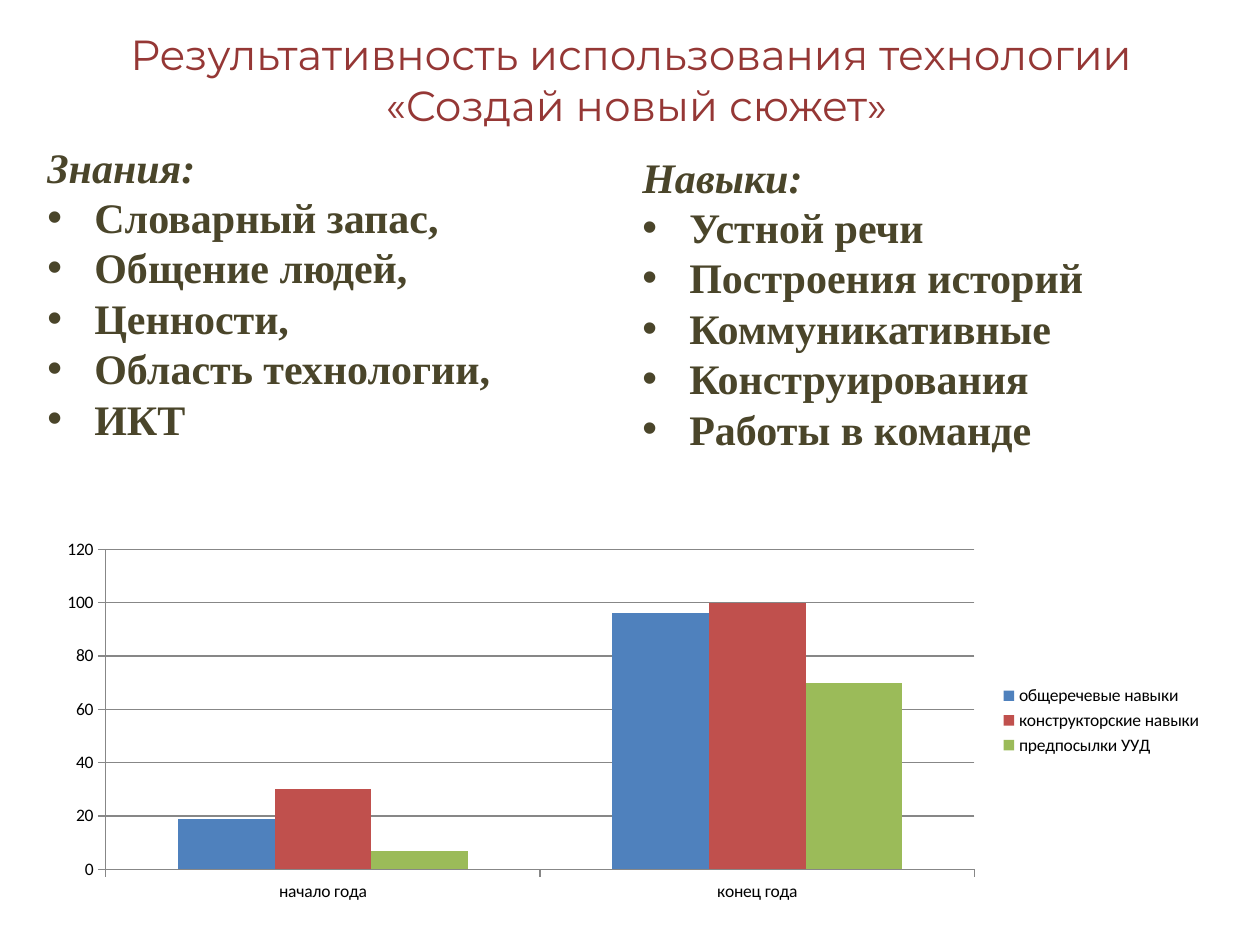
from lxml import etree
from pptx import Presentation
from pptx import util as u
from pptx.chart.data import CategoryChartData
from pptx.dml.color import RGBColor
from pptx.enum import chart as charts, text
from pptx.oxml.ns import qn

PX = 914400 / 126
INDENT = 47
TITLE = "Результативность использования технологии\v «Создай новый сюжет»"
KNOWLEDGE = ["Словарный запас,", "Общение людей,", "Ценности,", "Область технологии,", "ИКТ"]
SKILLS = ["Устной речи", "Построения историй", "Коммуникативные", "Конструирования", "Работы в команде"]
CATEGORIES = ["начало года", "конец года"]
SERIES = [
    ("общеречевые навыки", (19, 96), "4F81BD"),
    ("конструкторские навыки", (30, 100), "C0504D"),
    ("предпосылки УУД", (7, 70), "9BBB59"),
]


def px(value):
    return u.Emu(round(value * PX))


def color(value):
    return RGBColor.from_string(value)


def style_font(font, name, size, fill):
    font.name = name
    font.size = u.Pt(size)
    font.color.rgb = color(fill)


def add_textbox(slide, box, content):
    shape = slide.shapes.add_textbox(*map(px, box))
    shape.text_frame.word_wrap = True
    shape.text_frame.text = content
    return shape.text_frame


def add_title(slide, box, content):
    frame = add_textbox(slide, box, content)
    frame.vertical_anchor = text.MSO_ANCHOR.MIDDLE
    paragraph = frame.paragraphs[0]
    paragraph.alignment = text.PP_ALIGN.CENTER
    for run in paragraph.runs:
        style_font(run.font, "Montserrat", 24, "953735")


def add_bullet(paragraph):
    properties = paragraph._p.get_or_add_pPr()
    properties.set("marL", str(px(INDENT)))
    properties.set("indent", str(-px(INDENT)))
    etree.SubElement(properties, qn("a:buFont"), typeface="Arial")
    etree.SubElement(properties, qn("a:buChar"), char="•")


def add_list(slide, box, heading, items):
    frame = add_textbox(slide, box, "\n".join([heading, *items]))
    frame.auto_size = text.MSO_AUTO_SIZE.SHAPE_TO_FIT_TEXT
    for index, paragraph in enumerate(frame.paragraphs):
        if index:
            add_bullet(paragraph)
        for run in paragraph.runs:
            style_font(run.font, "Times New Roman", 24, "4A452A")
            run.font.bold = True
            run.font.italic = index == 0


def style_line(line):
    line.color.rgb = color("878787")
    line.width = u.Pt(0.75)


def add_column_chart(slide, box):
    data = CategoryChartData()
    data.categories = CATEGORIES
    for name, values, _ in SERIES:
        data.add_series(name, values)
    kind = charts.XL_CHART_TYPE.COLUMN_CLUSTERED
    chart = slide.shapes.add_chart(kind, *map(px, box), data).chart
    style_font(chart.font, "Calibri", 10, "000000")
    chart.has_title = False
    chart.has_legend = True
    chart.legend.position = charts.XL_LEGEND_POSITION.RIGHT
    chart.legend.include_in_layout = False
    plot = chart.plots[0]
    plot.gap_width = 150
    plot.overlap = 0
    plot.vary_by_categories = False
    for series, (_, _, fill) in zip(plot.series, SERIES):
        series.format.fill.solid()
        series.format.fill.fore_color.rgb = color(fill)
    for axis in (chart.category_axis, chart.value_axis):
        axis.major_tick_mark = charts.XL_TICK_MARK.OUTSIDE
        axis.minor_tick_mark = charts.XL_TICK_MARK.NONE
        style_line(axis.format.line)
    chart.value_axis.has_major_gridlines = True
    style_line(chart.value_axis.major_gridlines.format.line)


def main():
    presentation = Presentation()
    presentation.slide_width = px(1260)
    presentation.slide_height = px(945)
    slide = presentation.slides.add_slide(presentation.slide_layouts[6])
    add_title(slide, (64, 0, 1134, 158), TITLE)
    add_list(slide, (630, 145, 630, 318), "Навыки:", SKILLS)
    add_list(slide, (35, 135, 645, 318), "Знания:", KNOWLEDGE)
    add_column_chart(slide, (44, 532, 1171, 377))
    presentation.save("out.pptx")


if __name__ == "__main__":
    main()
